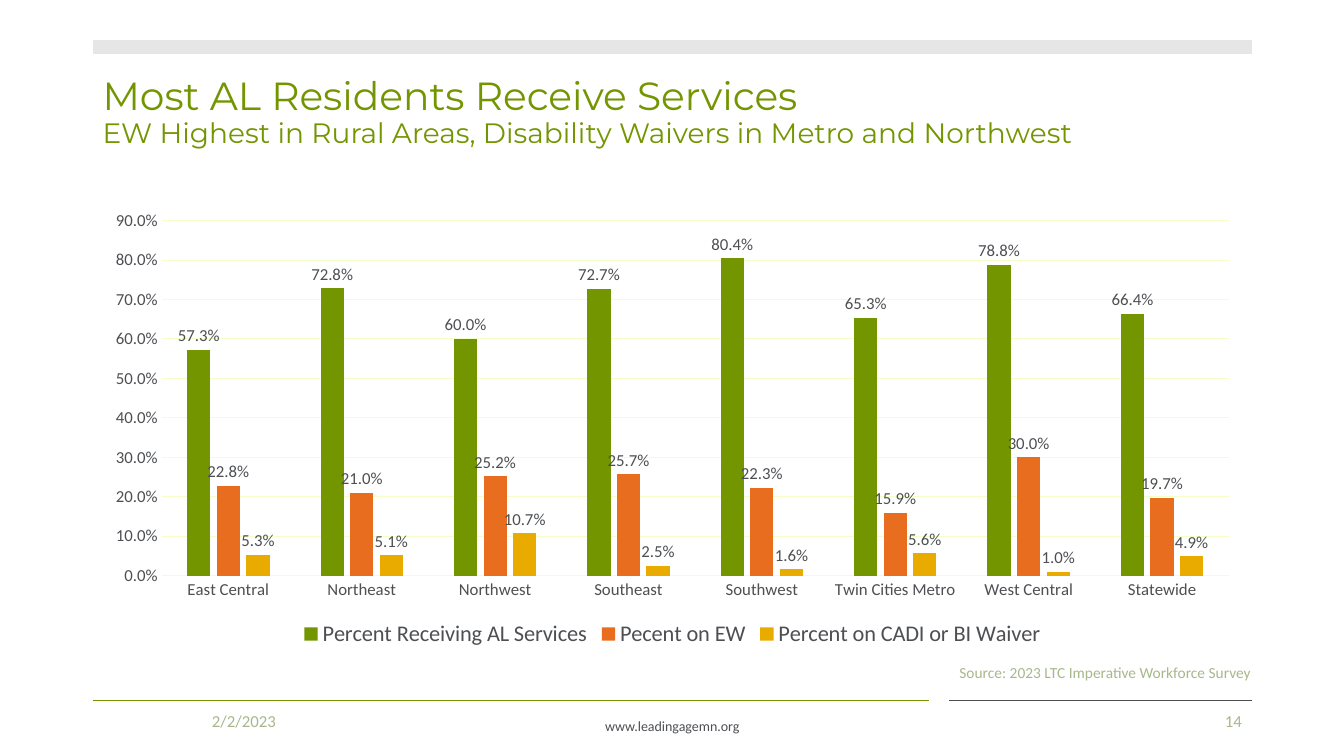
from lxml.etree import SubElement
from pptx import Presentation
from pptx.chart.data import CategoryChartData
from pptx.dml.color import RGBColor
from pptx.enum.chart import XL_CHART_TYPE, XL_LABEL_POSITION, XL_LEGEND_POSITION, XL_TICK_MARK
from pptx.enum.shapes import MSO_CONNECTOR
from pptx.enum.text import MSO_ANCHOR, PP_ALIGN
from pptx.oxml.ns import qn
from pptx.util import Pt

THEME = {
    "green": RGBColor.from_string("739600"),
    "orange": RGBColor.from_string("E86D1F"),
    "gold": RGBColor.from_string("EAAB00"),
    "gray": RGBColor.from_string("4D4F53"),
    "band": RGBColor.from_string("E6E6E6"),
    "sage": RGBColor.from_string("A6B88C"),
    "grid": RGBColor.from_string("F2FFC9"),
    "heading_font": "Montserrat",
    "body_font": "Calibri",
    "title": 28,
    "subtitle": 20,
    "legend": 16,
    "label": 12,
    "source": 11,
    "footer": 10,
}
LEFT, RIGHT = 66.24, 894.24
FOOTER_TOP = 500.4


def add_text(slide, lines, left, top, width, height, sizes, color="sage",
             font="body_font", align=PP_ALIGN.LEFT, anchor=MSO_ANCHOR.MIDDLE, spacing=1.0):
    box = slide.shapes.add_textbox(Pt(left), Pt(top), Pt(width), Pt(height))
    frame = box.text_frame
    frame.word_wrap = True
    frame.vertical_anchor = anchor
    paragraph = frame.paragraphs[0]
    paragraph.alignment = align
    paragraph.line_spacing = spacing
    for index, (line, size) in enumerate(zip(lines, sizes)):
        if index:
            paragraph.add_line_break()
        run = paragraph.add_run()
        run.text = line
        run.font.name = THEME[font]
        run.font.size = Pt(THEME[size])
        run.font.color.rgb = THEME[color]


def style_font(font, size):
    font.name = THEME["body_font"]
    font.size = Pt(THEME[size])
    font.color.rgb = THEME["gray"]


presentation = Presentation()
presentation.slide_width = Pt(960)
presentation.slide_height = Pt(540)
slide = presentation.slides.add_slide(presentation.slide_layouts[6])

rules = [
    (LEFT, 663.84, FOOTER_TOP, "green", 1),
    (678.24, RIGHT, FOOTER_TOP, "gray", 1),
    (LEFT, RIGHT, 33.84, "band", 10),
]
for start, end, height, color, weight in rules:
    rule = slide.shapes.add_connector(
        MSO_CONNECTOR.STRAIGHT, Pt(start), Pt(height), Pt(end), Pt(height))
    rule.line.color.rgb = THEME[color]
    rule.line.width = Pt(weight)
    SubElement(rule.element.spPr, qn("a:effectLst"))

add_text(slide, ["www.leadingagemn.org"], 318.24, 509.04, 324, 20.16, ["footer"],
         color="gray", align=PP_ALIGN.CENTER, anchor=MSO_ANCHOR.TOP)
add_text(slide,
         ["Most AL Residents Receive Services",
          "EW Highest in Rural Areas, Disability Waivers in Metro and Northwest"],
         LEFT, 28.8, 828, 104.4, ["title", "subtitle"],
         color="green", font="heading_font", spacing=0.9)
add_text(slide, ["Source: 2023 LTC Imperative Workforce Survey"],
         678.24, 465.84, 324, 28.8, ["source"])
add_text(slide, ["14"], 678.24, FOOTER_TOP, 216, 28.8, ["label"], align=PP_ALIGN.RIGHT)
add_text(slide, ["2/2/2023"], LEFT, FOOTER_TOP, 216, 28.8, ["label"], align=PP_ALIGN.CENTER)

chart_data = CategoryChartData(number_format="0.0%")
chart_data.categories = ["East Central", "Northeast", "Northwest", "Southeast",
                         "Southwest", "Twin Cities Metro", "West Central", "Statewide"]
services = [
    ("Percent Receiving AL Services", "green",
     [0.573, 0.728, 0.6, 0.727, 0.804, 0.653, 0.788, 0.664]),
    ("Pecent on EW", "orange",
     [0.228, 0.21, 0.252, 0.257, 0.223, 0.159, 0.3, 0.197]),
    ("Percent on CADI or BI Waiver", "gold",
     [0.053, 0.051, 0.107, 0.025, 0.016, 0.056, 0.01, 0.049]),
]
for name, color, values in services:
    chart_data.add_series(name, values)

chart = slide.shapes.add_chart(XL_CHART_TYPE.COLUMN_CLUSTERED, Pt(LEFT), Pt(144),
                               Pt(828), Pt(321.84), chart_data).chart
style_font(chart.font, "footer")
chart.has_title = False
chart.has_legend = True
chart.legend.position = XL_LEGEND_POSITION.BOTTOM
chart.legend.include_in_layout = False
style_font(chart.legend.font, "legend")

plot = chart.plots[0]
plot.gap_width = 219
plot.overlap = -27
plot.vary_by_categories = False
for series, (name, color, values) in zip(plot.series, services):
    series.format.fill.solid()
    series.format.fill.fore_color.rgb = THEME[color]
    series.invert_if_negative = False
    labels = series.data_labels
    labels.show_value = True
    labels.number_format = "0.0%"
    labels.number_format_is_linked = False
    labels.position = XL_LABEL_POSITION.OUTSIDE_END
    style_font(labels.font, "label")

for axis in (chart.category_axis, chart.value_axis):
    axis.major_tick_mark = XL_TICK_MARK.NONE
    axis.minor_tick_mark = XL_TICK_MARK.NONE
    style_font(axis.tick_labels.font, "label")

value_axis = chart.value_axis
value_axis.minimum_scale = 0
value_axis.maximum_scale = 0.9
value_axis.major_unit = 0.1
value_axis.tick_labels.number_format = "0.0%"
value_axis.tick_labels.number_format_is_linked = False
value_axis.format.line.fill.background()
value_axis.has_major_gridlines = True
for line in (chart.category_axis.format.line, value_axis.major_gridlines.format.line):
    line.color.rgb = THEME["grid"]
    line.width = Pt(0.75)

presentation.save("out.pptx")
